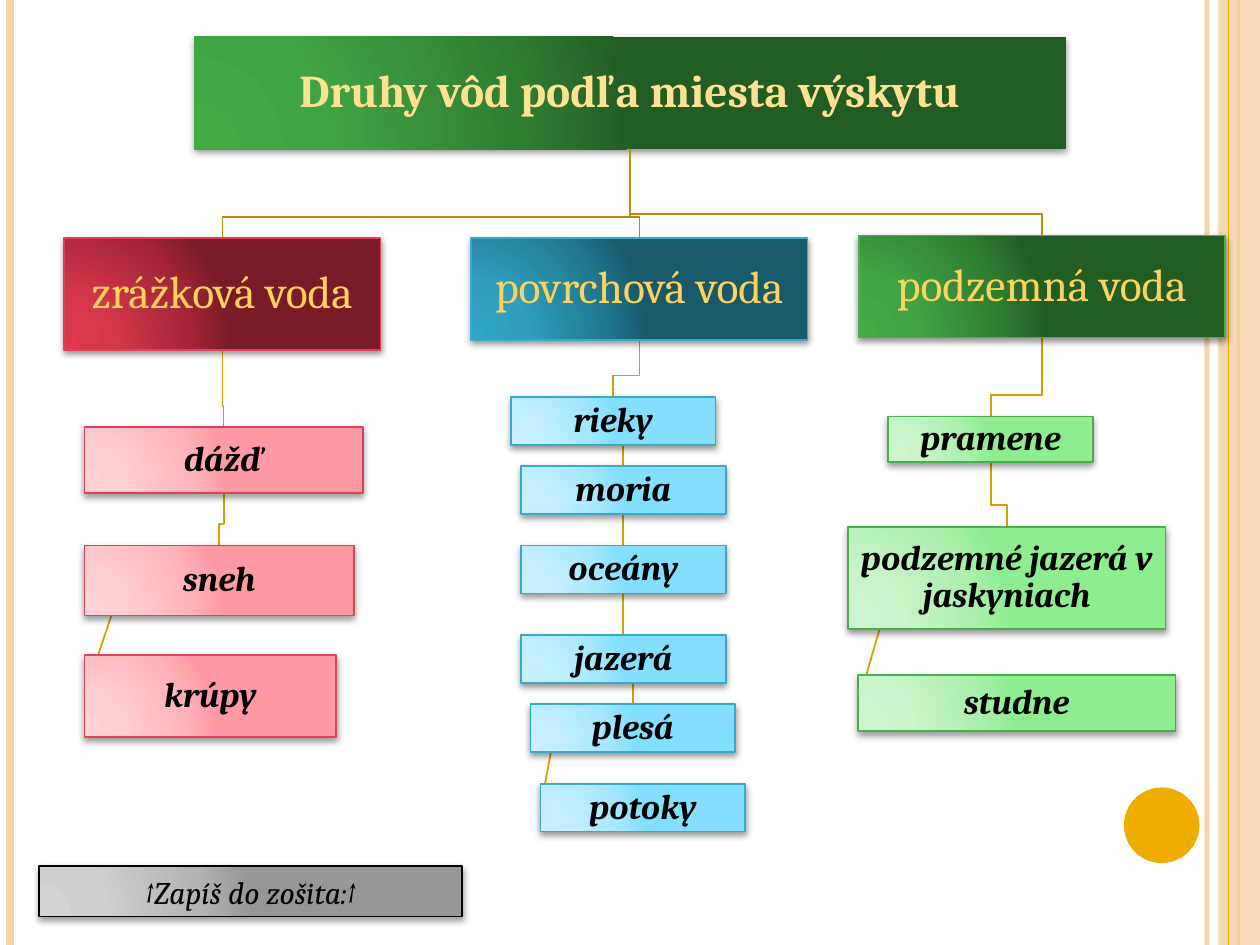
from lxml.etree import SubElement
from pptx import Presentation
from pptx.dml.color import RGBColor
from pptx.enum.shapes import MSO_CONNECTOR, MSO_SHAPE
from pptx.enum.text import MSO_ANCHOR, MSO_AUTO_SIZE, PP_ALIGN
from pptx.oxml import parse_xml
from pptx.oxml.ns import nsdecls, qn
from pptx.util import Inches, Pt

W, H = Inches(10), Inches(7.5)
COLS, ROWS = 100, 75
STOPS = (0, 30, 75, 100)
HEAD = {"size": 26, "color": "FFD25D", "shadow": (42, 1.6), "inset": 0.2, "spacing": 0.9}
LEAF = {"size": 20, "color": "000000", "bold": True, "italic": True,
        "shadow": (40, 2), "inset": 0.1, "spacing": 0.9}
TITLE = {**HEAD, "color": "FFE193", "bold": True}
NOTE = {**LEAF, "size": 18, "bold": False, "spacing": 1}
GREEN = ("43AA46", "41A444", "2F7D31", "225D24")
GREY = ("D3D3D3", "CFCFCF", "B4B4B4", "979797")
TITLE_AT = (15.4, 2.9, 69.2, 8.95)
BRANCHES = [
    ("zrážková voda", (5.1, 18.9, 25.1, 8.9), "DF4258",
     ("DD384F", "D5364C", "A32537", "791B28"), ("FFD2D6", "FFCED2", "FFB4BB", "FF9AA4"),
     [("dážď", (6.7, 33.9, 22.1, 5.25)), ("sneh", (6.7, 43.3, 21.4, 5.55)),
      ("krúpy", (6.7, 52, 20, 6.5))]),
    ("povrchová voda", (37.4, 18.9, 26.7, 8.1), "3BA8C6",
     ("32A5C4", "309FBD", "217991", "185A6B"), ("C8F0FF", "C3EEFF", "A4E7FF", "84DFFF"),
     [("rieky", (40.55, 31.5, 16.25, 3.85)), ("moria", (41.35, 37, 16.25, 3.8)),
      ("oceány", (41.35, 43.3, 16.25, 3.8)), ("jazerá", (41.35, 50.4, 16.25, 3.8)),
      ("plesá", (42.1, 55.9, 16.25, 3.8)), ("potoky", (42.9, 62.2, 16.25, 3.8))]),
    ("podzemná voda", (68.15, 18.7, 29.1, 8.1), "4BAD4E",
     GREEN, ("CEF5CF", "C9F4CA", "ACF0AD", "8DED8F"),
     [("pramene", (70.5, 33.05, 16.25, 3.6)),
      ("podzemné jazerá v jaskyniach", (67.3, 41.8, 25.2, 8.1)),
      ("studne", (68.1, 53.6, 25.2, 4.45))]),
]


def col(n):
    """Length of n grid columns."""
    return int(W * n / COLS)


def row(n):
    """Length of n grid rows."""
    return int(H * n / ROWS)


def place(at):
    """Grid box as slide lengths."""
    x, y, w, h = at
    return col(x), row(y), col(w), row(h)


def paint(fmt, color, alpha=100):
    """Solid colour, with opacity in percent, on a fill."""
    fmt.solid()
    fmt.fore_color.rgb = RGBColor.from_string(color)
    if alpha < 100:
        clr = fmt._xPr.find(".//" + qn("a:srgbClr"))
        SubElement(clr, qn("a:alpha")).set("val", str(alpha * 1000))


def stroke(sp, color, width, alpha=100):
    """Outline of a shape or a connector, without effects."""
    paint(sp.line.fill, color, alpha)
    sp.line.width = Pt(width)
    spPr = sp._element.spPr
    if spPr.find(qn("a:effectLst")) is None:
        SubElement(spPr, qn("a:effectLst"))


def shade(sp, colors, opacity, dist):
    """Circular gradient and soft shadow below the shape."""
    stops = "".join(f'<a:gs pos="{p * 1000}"><a:srgbClr val="{c}"/></a:gs>'
                    for p, c in zip(STOPS, colors))
    spPr = sp._element.spPr
    spPr.find(qn("a:ln")).addprevious(parse_xml(
        f'<a:gradFill {nsdecls("a")} rotWithShape="1"><a:gsLst>{stops}</a:gsLst>'
        '<a:path path="circle"><a:fillToRect l="5000" t="100000" r="120000" b="10000"/>'
        '</a:path></a:gradFill>'))
    spPr.append(parse_xml(
        f'<a:effectLst {nsdecls("a")}><a:outerShdw blurRad="{Pt(4)}" dist="{Pt(dist)}" '
        'dir="5400000" rotWithShape="0"><a:srgbClr val="000000">'
        f'<a:alpha val="{opacity * 1000}"/></a:srgbClr></a:outerShdw></a:effectLst>'))


def write(sp, text, fmt):
    """Centred text in a shape."""
    tf = sp.text_frame
    inset = col(fmt["inset"])
    frame = {"word_wrap": True, "auto_size": MSO_AUTO_SIZE.NONE,
             "vertical_anchor": MSO_ANCHOR.MIDDLE,
             **{f"margin_{side}": inset for side in ("left", "top", "right", "bottom")}}
    for name, value in frame.items():
        setattr(tf, name, value)
    p = tf.paragraphs[0]
    p.alignment, p.line_spacing = PP_ALIGN.CENTER, fmt["spacing"]
    r = p.add_run()
    r.text = text
    font = {"name": "Cambria", "size": Pt(fmt["size"]),
            "bold": fmt.get("bold", False), "italic": fmt.get("italic", False)}
    for name, value in font.items():
        setattr(r.font, name, value)
    paint(r.font.fill, fmt["color"])


def add_box(s, text, at, colors, border, fmt):
    """Shaded rectangle with text."""
    sp = s.shapes.add_shape(MSO_SHAPE.RECTANGLE, *place(at))
    paint(sp.line.fill, border)
    sp.line.width = Pt(1)
    shade(sp, colors, *fmt["shadow"])
    write(sp, text, fmt)


def add_title(s, text):
    """Title placeholder as the root of the tree."""
    sp = s.shapes.title
    sp.left, sp.top, sp.width, sp.height = place(TITLE_AT)
    sp.line.fill.background()
    shade(sp, GREEN, *TITLE["shadow"])
    write(sp, text, TITLE)


def add_line(s, start, end, color, width, alpha=100):
    """Straight line between two grid points."""
    (x1, y1), (x2, y2) = start, end
    sp = s.shapes.add_connector(MSO_CONNECTOR.STRAIGHT, col(x1), row(y1), col(x2), row(y2))
    stroke(sp, color, width, alpha)


def add_elbow(s, parent, child, color):
    """Stepped line from the parent's foot to the child's top."""
    (x1, y1, w1, h1), (x2, y2, w2, _) = parent, child
    x1, y1, x2 = x1 + w1 / 2, y1 + h1, x2 + w2 / 2
    if x1 == x2:
        add_line(s, (x1, y1), (x2, y2), color, 1)
        return
    bend = y2 - 1.7
    fb = s.shapes.build_freeform(col(x1), row(y1))
    fb.add_line_segments([(col(x), row(y)) for x, y in
                          ((x1, bend), (x2, bend), (x2, y2))], close=False)
    sp = fb.convert_to_shape()
    sp.fill.background()
    stroke(sp, color, 1)


def add_slant(s, parent, child, color):
    """Slanted line from the parent's foot to the child's left side."""
    (x1, y1, w1, h1), (x2, y2, _, h2) = parent, child
    add_line(s, (x1 + w1 / 10, y1 + h1), (x2, y2 + h2 / 2), color, 1)


def add_frame(s):
    """Stripes and disc of the theme."""
    for x, color, width, alpha in ((95.8, "F6D3AB", 3, 93), (0.8, "F6D3AB", 4.5, 100),
                                   (98.3, "F0AD00", 1.5, 100)):
        add_line(s, (x, 0), (x, ROWS), color, width, alpha)
    for kind, at, color, alpha in (
            (MSO_SHAPE.RECTANGLE, (96.7, 0, 3.3, ROWS), "F6D3AB", 87),
            (MSO_SHAPE.OVAL, (89.2, 62.5, 6, 6), "F0AD00", 100)):
        sp = s.shapes.add_shape(kind, *place(at))
        sp.shadow.inherit = False
        paint(sp.fill, color, alpha)
        sp.line.fill.background()
    add_line(s, (97.5, 0), (97.5, ROWS), "F0AD00", 0.75)


def add_branch(s, text, at, border, dark, light, leaves):
    """One kind of water with its chain of examples."""
    add_elbow(s, TITLE_AT, at, "C08B00")
    chain = [at] + [leaf_at for _, leaf_at in leaves]
    for i, (parent, child) in enumerate(zip(chain, chain[1:]), 1):
        join = add_slant if i == len(leaves) else add_elbow
        join(s, parent, child, "DA9D00")
    add_box(s, text, at, dark, border, HEAD)
    for leaf, leaf_at in leaves:
        add_box(s, leaf, leaf_at, light, border, LEAF)


def main():
    """Build and save the slide."""
    prs = Presentation()
    prs.slide_width, prs.slide_height = W, H
    s = prs.slides.add_slide(prs.slide_layouts[5])
    add_frame(s)
    add_title(s, "Druhy vôd podľa miesta výskytu")
    for branch in BRANCHES:
        add_branch(s, *branch)
    add_box(s, "↑Zapíš do zošita:↑", (3.1, 68.75, 33.6, 4), GREY, "000000", NOTE)
    prs.save("out.pptx")


if __name__ == "__main__":
    main()
